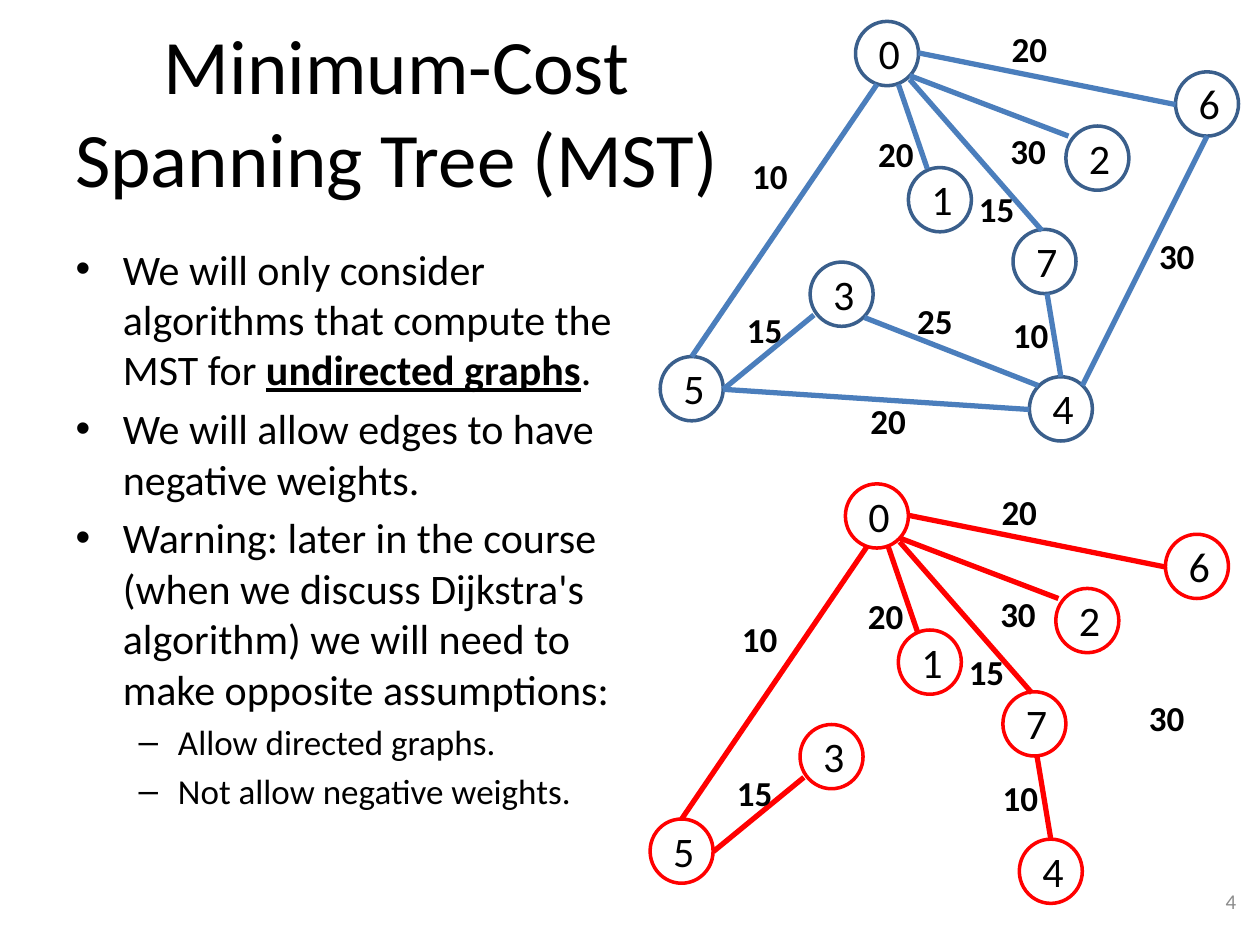
from typing import NamedTuple

from lxml.etree import SubElement
from pptx import Presentation
from pptx.dml.color import RGBColor
from pptx.enum.shapes import MSO_CONNECTOR, MSO_SHAPE
from pptx.enum.text import MSO_ANCHOR as Anchor, MSO_AUTO_SIZE as AutoSize, PP_ALIGN as Align
from pptx.oxml.ns import qn
from pptx.util import Inches, Pt

COLORS = {"text": "000000", "number": "8C8C8C", "ring": "3A5F8C",
          "edge": "4B7EBC", "tree": "FF0000"}
FONT = "Calibri"
NODE_W, NODE_H = 0.5, 0.51


class Node(NamedTuple):
    name: str
    x: float
    y: float


class Edge(NamedTuple):
    x1: float
    y1: float
    x2: float
    y2: float
    in_tree: bool = True


class Weight(NamedTuple):
    text: str
    x: float
    y: float
    in_tree: bool = True


NODES = [
    Node("0", 6.79, 0.17), Node("1", 7.21, 1.33), Node("7", 8.04, 1.82), Node("2", 8.46, 1.0),
    Node("5", 5.24, 2.83), Node("3", 6.43, 2.08), Node("4", 8.17, 2.99), Node("6", 9.33, 0.57),
]
EDGES = [
    Edge(7.29, 0.42, 9.33, 0.83),         # 0-6
    Edge(7.22, 0.6, 8.48, 1.08),          # 0-2
    Edge(7.13, 0.67, 7.36, 1.34),         # 0-1
    Edge(6.96, 0.67, 5.49, 2.83),         # 0-5
    Edge(7.22, 0.63, 8.27, 1.83),         # 0-7
    Edge(5.74, 3.09, 6.46, 2.5),          # 5-3
    Edge(5.74, 3.09, 8.17, 3.25, False),  # 5-4
    Edge(6.86, 2.52, 8.24, 3.06, False),  # 3-4
    Edge(8.31, 2.33, 8.42, 2.99),         # 7-4
    Edge(9.58, 1.08, 8.59, 3.06, False),  # 6-4
]
WEIGHTS = [
    Weight("10", 5.87, 1.18), Weight("20", 7.93, 0.17), Weight("30", 7.92, 0.98),
    Weight("20", 6.87, 1.0), Weight("15", 7.67, 1.44), Weight("30", 9.1, 1.81),
    Weight("10", 7.94, 2.44), Weight("20", 6.81, 3.12, False),
    Weight("15", 5.83, 2.4), Weight("25", 7.18, 2.33, False),
]
BULLETS = [
    (0, ["We will only consider algorithms that compute the MST for ", "undirected graphs", "."]),
    (0, ["We will allow edges to have negative weights."]),
    (0, ["Warning: later in the course (when we discuss Dijkstra's algorithm) "
         "we will need to make opposite assumptions:"]),
    (1, ["Allow directed graphs."]),
    (1, ["Not allow negative weights."]),
]


def rgb(name: str) -> RGBColor:
    return RGBColor.from_string(COLORS[name])


def add_run(p, text: str, *, size: float, color: str = "text",
            bold: bool = False, underline: bool = False) -> None:
    r = p.add_run()
    r.text = text
    r.font.name, r.font.size = FONT, Pt(size)
    r.font.bold, r.font.underline = bold, underline
    r.font.color.rgb = rgb(color)


def add_label(shapes, text: str, x: float, y: float, w: float, h: float, *,
              align=Align.LEFT, anchor=Anchor.TOP, wrap: bool = True, **fmt) -> None:
    tf = shapes.add_textbox(Inches(x), Inches(y), Inches(w), Inches(h)).text_frame
    tf.word_wrap, tf.vertical_anchor = wrap, anchor
    tf.paragraphs[0].alignment = align
    add_run(tf.paragraphs[0], text, **fmt)


def add_node(shapes, node: Node, dx: float, dy: float, color: str) -> None:
    x, y = node.x + dx, node.y + dy
    sp = shapes.add_shape(MSO_SHAPE.OVAL, Inches(x), Inches(y), Inches(NODE_W), Inches(NODE_H))
    sp.shadow.inherit = False
    sp.fill.background()
    sp.line.color.rgb, sp.line.width = rgb(color), Pt(2)
    add_label(shapes, f" {node.name}", x, y, 0.46, 0.5, align=Align.CENTER, size=24)


def add_edge(shapes, edge: Edge, dx: float, dy: float, color: str) -> None:
    line = shapes.add_connector(MSO_CONNECTOR.STRAIGHT, Inches(edge.x1 + dx), Inches(edge.y1 + dy),
                                Inches(edge.x2 + dx), Inches(edge.y2 + dy))
    line.line.color.rgb, line.line.width = rgb(color), Pt(3)
    SubElement(line._element.spPr, qn("a:effectLst"))


def add_graph(slide, dx: float, dy: float, *, ring: str, edge_color: str,
              tree_only: bool = False) -> None:
    shapes = slide.shapes.add_group_shape().shapes
    for node in NODES:
        add_node(shapes, node, dx, dy, ring)
    for edge in EDGES:
        if edge.in_tree or not tree_only:
            add_edge(shapes, edge, dx, dy, edge_color)
    for weight in WEIGHTS:
        if weight.in_tree or not tree_only:
            add_label(shapes, weight.text, weight.x + dx, weight.y + dy, 0.49, 0.44,
                      wrap=False, size=20, bold=True)


def place(sp, x: float, y: float, w: float, h: float):
    sp.left, sp.top, sp.width, sp.height = Inches(x), Inches(y), Inches(w), Inches(h)
    sp.text_frame.auto_size = AutoSize.NONE
    return sp.text_frame


def main() -> None:
    prs = Presentation()
    prs.slide_width, prs.slide_height = Inches(10), Inches(7.5)
    s = prs.slides.add_slide(prs.slide_layouts[1])

    # Title
    tf = place(s.shapes.title, 0.42, 0.25, 5.46, 1.25)
    tf.vertical_anchor = Anchor.MIDDLE
    tf.paragraphs[0].alignment = Align.CENTER
    add_run(tf.paragraphs[0], "Minimum-Cost Spanning Tree (MST)", size=44)

    # Bullets: the second run of a paragraph is the emphasised one
    tf = place(s.placeholders[1], 0.5, 1.88, 4.5, 5.12)
    for i, (level, runs) in enumerate(BULLETS):
        p = tf.add_paragraph() if i else tf.paragraphs[0]
        p.level = level
        for j, text in enumerate(runs):
            add_run(p, text, size=20 if level else 24, bold=j == 1, underline=j == 1)

    # Slide number
    add_label(s.shapes, "4", 7.58, 6.95, 2.33, 0.4, align=Align.RIGHT,
              anchor=Anchor.MIDDLE, size=12, color="number")

    # Full graph above, its spanning tree below
    add_graph(s, 0, 0, ring="ring", edge_color="edge")
    add_graph(s, -0.08, 3.67, ring="tree", edge_color="tree", tree_only=True)

    prs.save("out.pptx")


if __name__ == "__main__":
    main()
